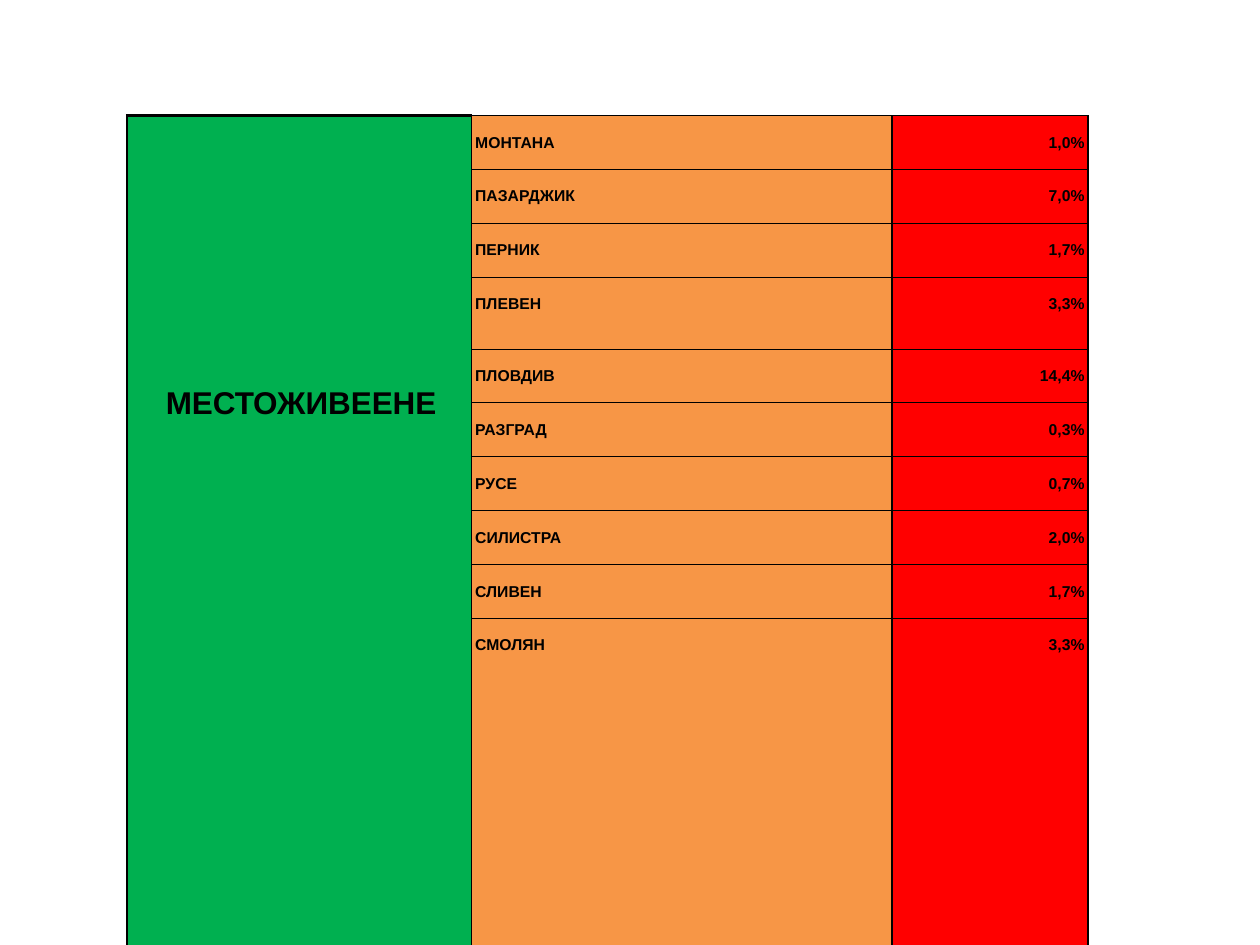
"""Builds the slide with the table of respondents by place of residence."""
from dataclasses import dataclass

from lxml.etree import SubElement
from pptx import Presentation
from pptx.dml.color import RGBColor
from pptx.enum.text import MSO_ANCHOR, PP_ALIGN
from pptx.oxml.ns import qn
from pptx.util import Inches, Pt

TOPIC = "МЕСТОЖИВЕЕНЕ"
REGIONS = [
    ("МОНТАНА", "1,0%"),
    ("ПАЗАРДЖИК", "7,0%"),
    ("ПЕРНИК", "1,7%"),
    ("ПЛЕВЕН", "3,3%"),
    ("ПЛОВДИВ", "14,4%"),
    ("РАЗГРАД", "0,3%"),
    ("РУСЕ", "0,7%"),
    ("СИЛИСТРА", "2,0%"),
    ("СЛИВЕН", "1,7%"),
    ("СМОЛЯН", "3,3%"),
]
TALL_REGION = "ПЛЕВЕН"


@dataclass(frozen=True)
class Theme:
    font: str = "Arial"
    ink: str = "000000"
    topic_fill: str = "00B050"
    region_fill: str = "F79646"
    share_fill: str = "FF0000"
    topic_size: int = 28
    region_size: int = 14
    thin: float = 1
    thick: float = 2.25


THEME = Theme()
SLIDE_WIDTH, SLIDE_HEIGHT = Inches(15.59), Inches(11.69)
LEFT, TOP = Inches(1.57), Inches(1.43)
COLUMN_WIDTHS = [Inches(4.27), Inches(5.2), Inches(2.42)]
LINE = Pt(16)
TOPIC_LINES_ABOVE = 16
INDENT = Inches(0.04)


def set_borders(cell, left, right, top, bottom):
    """Draw the four sides of a cell; a zero width leaves a side open."""
    properties = cell._tc.get_or_add_tcPr()
    for side, width in zip("LRTB", (left, right, top, bottom)):
        border = SubElement(properties, qn(f"a:ln{side}"), w=str(Pt(width)))
        if width:
            ink = SubElement(border, qn("a:solidFill"))
            SubElement(ink, qn("a:srgbClr"), val=THEME.ink)
        else:
            SubElement(border, qn("a:noFill"))


def set_fill(cell, color):
    """Give a cell a plain colour."""
    cell.fill.solid()
    cell.fill.fore_color.rgb = RGBColor.from_string(color)


def write(cell, wording, size, align, lines_above=1):
    """Write one bold line, a number of lines below the top of the cell."""
    cell.vertical_anchor = MSO_ANCHOR.TOP
    cell.margin_top, cell.margin_bottom = LINE * lines_above, 0
    cell.margin_left = cell.margin_right = INDENT
    paragraph = cell.text_frame.paragraphs[0]
    paragraph.alignment = align
    paragraph.line_spacing = LINE
    run = paragraph.add_run()
    run.text = wording
    run.font.name = THEME.font
    run.font.size = Pt(size)
    run.font.bold = True
    run.font.color.rgb = RGBColor.from_string(THEME.ink)


def main():
    """Lay out the table and save the slide."""
    deck = Presentation()
    deck.slide_width, deck.slide_height = SLIDE_WIDTH, SLIDE_HEIGHT
    slide = deck.slides.add_slide(deck.slide_layouts[6])

    heights = [LINE * (4 if region == TALL_REGION else 3) for region, _ in REGIONS]
    heights[-1] = SLIDE_HEIGHT - TOP - sum(heights[:-1])
    residence = slide.shapes.add_table(
        len(REGIONS), len(COLUMN_WIDTHS), LEFT, TOP, sum(COLUMN_WIDTHS), sum(heights)
    ).table
    residence.first_row = residence.horz_banding = False
    for column, width in zip(residence.columns, COLUMN_WIDTHS):
        column.width = width
    for row, height in zip(residence.rows, heights):
        row.height = height

    thin, thick = THEME.thin, THEME.thick
    last = len(REGIONS) - 1
    for index, (region, share) in enumerate(REGIONS):
        topic_cell, region_cell, share_cell = residence.rows[index].cells
        bottom = 0 if index == last else thin
        set_borders(topic_cell, thick, thin, 0 if index else thick, 0)
        set_borders(region_cell, thin, thick, thin, bottom)
        set_borders(share_cell, thick, thick, thin, bottom)
        set_fill(topic_cell, THEME.topic_fill)
        set_fill(region_cell, THEME.region_fill)
        set_fill(share_cell, THEME.share_fill)
        write(region_cell, region, THEME.region_size, PP_ALIGN.LEFT)
        write(share_cell, share, THEME.region_size, PP_ALIGN.RIGHT)

    topic = residence.cell(0, 0)
    topic.merge(residence.cell(last, 0))
    write(topic, TOPIC, THEME.topic_size, PP_ALIGN.CENTER, TOPIC_LINES_ABOVE)
    topic.margin_left = INDENT * 2

    deck.save("out.pptx")


if __name__ == "__main__":
    main()
